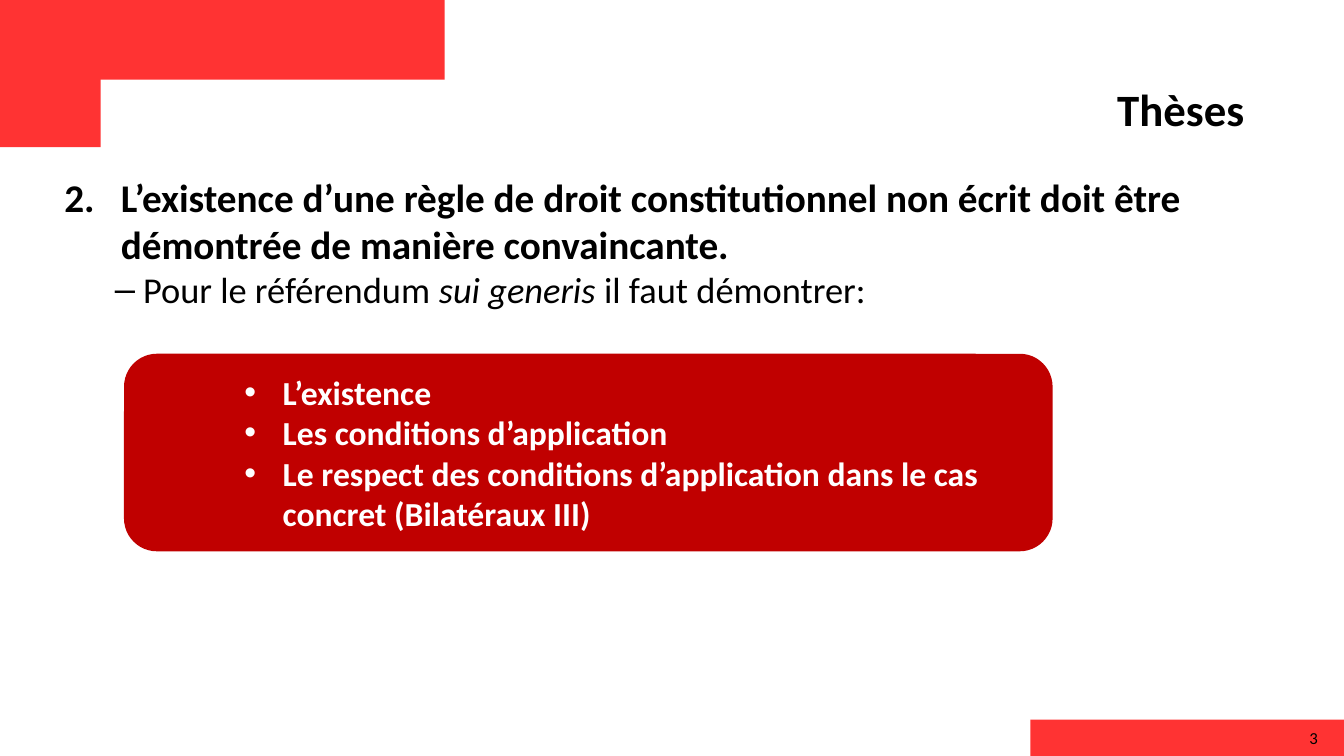
"""Build the "Thèses" slide on unwritten constitutional law."""
from pptx import Presentation
from pptx.dml.color import RGBColor
from pptx.enum.shapes import MSO_SHAPE as SHAPE
from pptx.enum.text import MSO_ANCHOR as ANCHOR, PP_ALIGN as ALIGN
from pptx.oxml.ns import qn
from pptx.util import Inches, Pt
from lxml.etree import SubElement

RED = RGBColor(0xFF, 0x33, 0x33)
DARK_RED = RGBColor(0xC0, 0x00, 0x00)
WHITE = RGBColor(0xFF, 0xFF, 0xFF)
BLACK = RGBColor(0x00, 0x00, 0x00)

prs = Presentation()
prs.slide_width, prs.slide_height = Inches(13.33), Inches(7.5)
s = prs.slides.add_slide(prs.slide_layouts[6])


def add_box(kind, box, fill):
    sp = s.shapes.add_shape(kind, *[Inches(v) for v in box])
    sp.shadow.inherit = False
    sp.fill.solid()
    sp.fill.fore_color.rgb = fill
    sp.line.fill.background()
    return sp


def style(p, size, color=BLACK, bold=False, align=ALIGN.LEFT, left=0, hang=0, bullet=None, start=None):
    pPr = p._p.get_or_add_pPr()
    if left:
        pPr.set("marL", str(Inches(left)))
        pPr.set("indent", str(-Inches(hang)))
    if start:
        SubElement(pPr, qn("a:buFont"), typeface="+mj-lt")
        SubElement(pPr, qn("a:buAutoNum"), type="arabicPeriod", startAt=str(start))
    elif bullet:
        SubElement(pPr, qn("a:buFont"), typeface="Arial")
        SubElement(pPr, qn("a:buChar"), char=bullet)
    p.alignment = align
    for r in p.runs:
        r.font.name = "Calibri"
        r.font.size = Pt(size)
        r.font.bold = bold
        r.font.color.rgb = color


for box in [(0, 0, 4.41, 0.79), (0, 0.76, 1, 0.7), (10.22, 7.14, 3.11, 0.36)]:
    add_box(SHAPE.RECTANGLE, box, RED)

for text, box, size, bold, anchor in [
    ("Thèses", (2.92, 0.76, 9.52, 0.77), 32, True, ANCHOR.TOP),
    ("3", (10.06, 7.12, 3.11, 0.4), 12, False, ANCHOR.MIDDLE),
]:
    tf = s.shapes.add_textbox(*[Inches(v) for v in box]).text_frame
    tf.word_wrap = True
    tf.vertical_anchor = anchor
    tf.text = text
    style(tf.paragraphs[0], size, bold=bold, align=ALIGN.RIGHT)

tf = add_box(SHAPE.RECTANGLE, (0.54, 1.67, 12.11, 5.42), WHITE).text_frame
tf.vertical_anchor = ANCHOR.TOP
tf.text = ("L’existence d’une règle de droit constitutionnel non écrit "
           "doit être démontrée de manière convaincante.")
style(tf.paragraphs[0], 28, bold=True, left=0.56, hang=0.56, start=2)
p = tf.add_paragraph()
p.level = 1
for text in ["Pour le référendum ", "sui generis ", "il faut démontrer:"]:
    p.add_run().text = text
style(p, 26, left=0.78, hang=0.28, bullet="–")
p.runs[1].font.italic = True

tf = add_box(SHAPE.ROUNDED_RECTANGLE, (1.23, 3.51, 9.21, 1.96), DARK_RED).text_frame
tf.vertical_anchor = ANCHOR.MIDDLE
tf.text = "\n".join([
    "L’existence",
    "Les conditions d’application",
    "Le respect des conditions d’application dans le cas concret (Bilatéraux III)",
])
for p in tf.paragraphs:
    p.level = 2
    style(p, 24, WHITE, True, left=1.38, hang=0.38, bullet="•")

prs.save("out.pptx")
